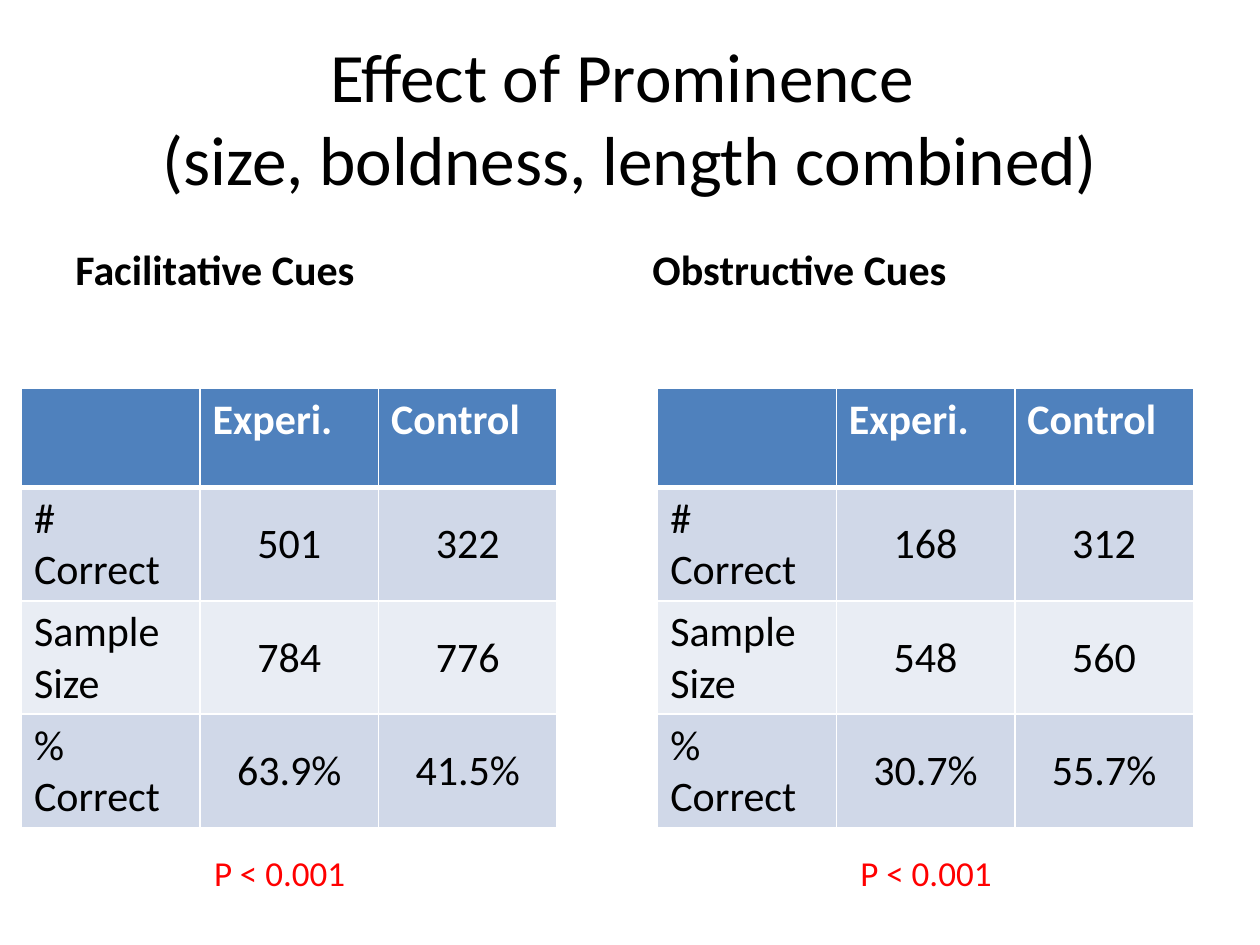
from lxml.etree import SubElement
from pptx import Presentation
from pptx.dml.color import RGBColor
from pptx.enum.text import MSO_ANCHOR as Anchor, PP_ALIGN as Align
from pptx.oxml import parse_xml
from pptx.oxml.ns import nsdecls, qn
from pptx.util import Inches, Pt

# Content
TITLE = "Effect of Prominence \v(size, boldness, length combined)"
HEADER = ("", "Experi.", "Control")
ROW_LABELS = ("# Correct", "Sample Size", "% Correct")
PANELS = [
    {"heading": "Facilitative Cues", "result": "P < 0.001",
     "values": [("501", "322"), ("784", "776"), ("63.9%", "41.5%")],
     "heading_left": 5, "table_left": 1.7, "result_left": 16},
    {"heading": "Obstructive Cues", "result": "P < 0.001",
     "values": [("168", "312"), ("548", "560"), ("30.7%", "55.7%")],
     "heading_left": 50.8, "table_left": 52.2, "result_left": 67.3},
]

THEME = {
    "font": "Calibri", "title": 39.6, "body": 24, "result": 20,
    "text": "000000", "alert": "FF0000", "light": "FFFFFF",
    "header": "4F81BD", "bands": ("D0D8E8", "E9EDF4"),
}

# Geometry, in percent of the slide's width or height
SLIDE_WIDTH, SLIDE_HEIGHT = Inches(10), Inches(7.5)
TITLE_BOX = (5, 4, 90, 16.67)
HEADING_TOP, HEADING_SIZE = 22.4, (44.2, 9.33)
TABLE_TOP, COLUMN_WIDTH, ROW_HEIGHT = 41.07, 14.17, 10.5
RESULT_TOP, RESULT_SIZE = 89.47, (12.5, 5.87)


def across(share):
    return round(SLIDE_WIDTH * share / 100)


def down(share):
    return round(SLIDE_HEIGHT * share / 100)


def write(frame, text, size=THEME["body"], color=THEME["text"], bold=False,
          align=Align.LEFT, space_before=0):
    paragraph = frame.paragraphs[0]
    paragraph.text = text
    paragraph.alignment = align
    paragraph.space_before = Pt(space_before)
    for run in paragraph.runs:
        run.font.name, run.font.size, run.font.bold = THEME["font"], Pt(size), bold
        run.font.color.rgb = RGBColor.from_string(color)


def add_text(slide, box, text, anchor=Anchor.TOP, wrap=True, **style):
    left, top, width, height = box
    shape = slide.shapes.add_textbox(across(left), down(top), across(width), down(height))
    frame = shape.text_frame
    frame.word_wrap = wrap
    frame.vertical_anchor = anchor
    write(frame, text, **style)


def set_borders(cell, **widths):
    """Draw the cell's edges; the lines must come before its fill."""
    properties = cell._tc.get_or_add_tcPr()
    for index, edge in enumerate("LRTB"):
        line = parse_xml(f'<a:ln{edge} {nsdecls("a")} w="{Pt(widths.get(edge, 1))}"/>')
        fill = SubElement(line, qn("a:solidFill"))
        SubElement(fill, qn("a:srgbClr"), val=THEME["light"])
        properties.insert(index, line)


def add_table(slide, panel):
    rows = [HEADER] + [(label, *values)
                       for label, values in zip(ROW_LABELS, panel["values"])]
    table = slide.shapes.add_table(
        len(rows), len(HEADER), across(panel["table_left"]), down(TABLE_TOP),
        across(COLUMN_WIDTH * len(HEADER)), down(ROW_HEIGHT * len(rows))).table
    for r, row in enumerate(rows):
        is_header = r == 0
        fill = THEME["header"] if is_header else THEME["bands"][(r - 1) % 2]
        for c, text in enumerate(row):
            cell = table.cell(r, c)
            is_value = not is_header and c > 0
            cell.fill.solid()
            cell.fill.fore_color.rgb = RGBColor.from_string(fill)
            set_borders(cell, T=3 if r == 1 else 1, B=3 if is_header else 1)
            if is_value:
                cell.vertical_anchor = Anchor.MIDDLE
                cell.margin_left = cell.margin_right = cell.margin_top = Inches(0.01)
                cell.margin_bottom = 0
            write(cell.text_frame, text, bold=is_header,
                  color=THEME["light"] if is_header else THEME["text"],
                  align=Align.CENTER if is_value else Align.LEFT)


def main():
    presentation = Presentation()
    presentation.slide_width, presentation.slide_height = SLIDE_WIDTH, SLIDE_HEIGHT
    slide = presentation.slides.add_slide(presentation.slide_layouts[6])

    # Title
    add_text(slide, TITLE_BOX, TITLE, anchor=Anchor.MIDDLE,
             size=THEME["title"], align=Align.CENTER)

    # Heading, table and test result of each panel
    for panel in PANELS:
        add_text(slide, (panel["heading_left"], HEADING_TOP, *HEADING_SIZE),
                 panel["heading"], anchor=Anchor.BOTTOM, bold=True, space_before=4.8)
        add_table(slide, panel)
        add_text(slide, (panel["result_left"], RESULT_TOP, *RESULT_SIZE),
                 panel["result"], wrap=False, size=THEME["result"], color=THEME["alert"])

    presentation.save("out.pptx")


if __name__ == "__main__":
    main()
